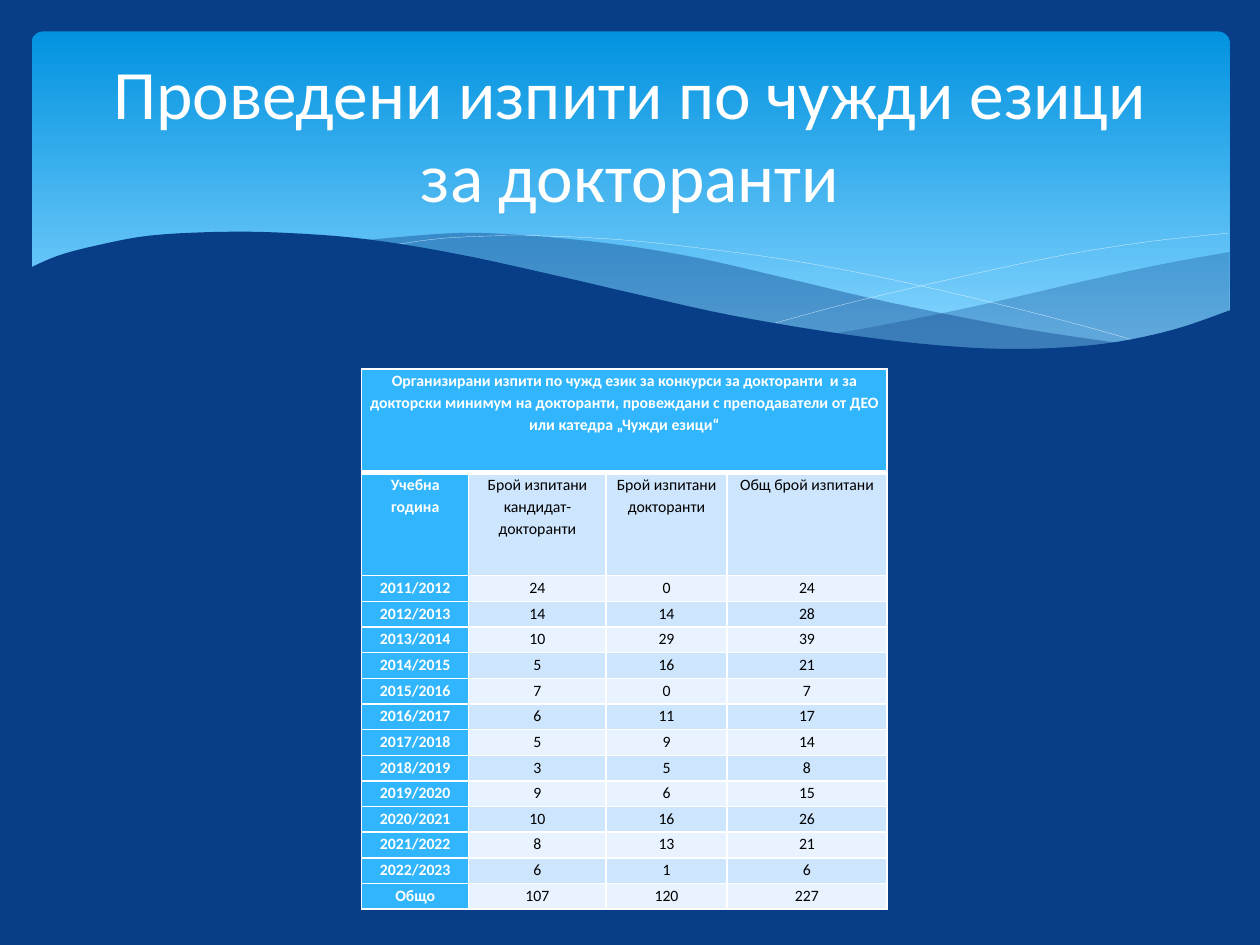
from lxml.etree import SubElement
from pptx import Presentation
from pptx.dml.color import RGBColor
from pptx.enum.shapes import MSO_SHAPE
from pptx.enum.text import MSO_ANCHOR, MSO_AUTO_SIZE, PP_ALIGN
from pptx.oxml import parse_xml
from pptx.oxml.ns import nsdecls, qn
from pptx.util import Inches, Pt

FONT = "Calibri"
COLORS = {
    "navy": "073E87", "sky_top": "0293E0", "sky_bottom": "83D3FE",
    "head": "31B6FD", "band_dark": "CEE5FE", "band_light": "E8F3FF",
    "white": "FFFFFF", "black": "000000",
}
TITLE = "Проведени изпити по чужди езици за докторанти"
CAPTION = ("Организирани изпити по чужд език за конкурси за докторанти  и за "
           "докторски минимум на докторанти, провеждани с преподаватели от ДЕО "
           "или катедра „Чужди езици“")
HEADINGS = ("Учебна година", "Брой изпитани кандидат-докторанти",
            "Брой изпитани докторанти", "Общ брой изпитани")
EXAMS = [(24, 0, 24), (14, 14, 28), (10, 29, 39), (5, 16, 21), (7, 0, 7),
         (6, 11, 17), (5, 9, 14), (3, 5, 8), (9, 6, 15), (10, 16, 26),
         (8, 13, 21), (6, 1, 6)]
FIRST_YEAR = 2011
TOTALS = ("Общо", 107, 120, 227)

# Knots of the curves, in inches
RIGHT_WAVE_TOP = [(9.76, 2), (9.21, 2.1), (8.61, 2.23), (7.79, 2.42),
                  (7.06, 2.57), (6.61, 2.65)]
RIGHT_WAVE_BOTTOM = [(6.61, 2.65), (7.05, 2.71), (7.57, 2.76), (8.14, 2.78),
                     (8.72, 2.74), (9.21, 2.65), (9.76, 2.47)]
MIDDLE_WAVE_TOP = [(8.93, 2.73), (8.07, 2.6), (7.06, 2.4), (6.29, 2.22),
                   (5.55, 2.05), (4.89, 1.94), (4.2, 1.87), (3.61, 1.85),
                   (2.86, 1.91)]
MIDDLE_WAVE_BOTTOM = [(2.86, 1.91), (3.62, 2.03), (4.49, 2.22), (5.3, 2.4),
                      (6.01, 2.55), (6.8, 2.68), (7.48, 2.76), (8.18, 2.78),
                      (8.93, 2.73)]
FALLING_LINE = [(3.09, 1.95), (3.53, 1.89), (4.16, 1.87), (4.89, 1.9),
                (5.56, 1.97), (6.36, 2.08), (7.27, 2.26), (8.31, 2.51),
                (9.07, 2.72)]
RISING_LINE = [(6.13, 2.57), (6.72, 2.41), (7.48, 2.23), (8.36, 2.04),
               (9.1, 1.92), (9.75, 1.85)]
FRONT_WAVE = [(9.77, 2.46), (9.3, 2.62), (8.75, 2.73), (8.09, 2.77),
              (7.44, 2.74), (6.68, 2.65), (5.79, 2.5), (5.03, 2.33),
              (4.47, 2.2), (3.65, 2.02), (2.92, 1.9), (2.3, 1.85),
              (1.77, 1.84), (1.19, 1.87), (0.76, 1.95), (0.46, 2.03),
              (0.23, 2.13)]


def rgb(name):
    return RGBColor.from_string(COLORS[name])


def smooth(knots, steps=5):
    """Catmull-Rom curve through the knots, as a list of points."""
    ends = [knots[0], *knots, knots[-1]]
    points = [knots[0]]
    for a, b, c, d in zip(ends, ends[1:], ends[2:], ends[3:]):
        for i in range(1, steps + 1):
            t = i / steps
            points.append(tuple(
                (2 * q + (r - p) * t + (2 * p - 5 * q + 4 * r - u) * t ** 2
                 + (3 * q - p - 3 * r + u) * t ** 3) / 2
                for p, q, r, u in zip(a, b, c, d)))
    return points


def add_outline(s, points, close):
    """Freeform through points in inches; its own units are whole EMU."""
    start, *rest = [(Inches(x), Inches(y)) for x, y in points]
    builder = s.shapes.build_freeform(*start, scale=1.0)
    builder.add_line_segments(rest, close=close)
    sp = builder.convert_to_shape()
    sp.shadow.inherit = False
    return sp


def add_wave(s, points, opacity=100):
    sp = add_outline(s, points, True)
    sp.line.fill.background()
    sp.fill.solid()
    sp.fill.fore_color.rgb = rgb("navy")
    if opacity < 100:
        color = sp.fill._xPr.find(qn("a:solidFill"))[0]
        SubElement(color, qn("a:alpha")).set("val", str(opacity * 1000))


def add_hairline(s, knots):
    sp = add_outline(s, smooth(knots), False)
    sp.fill.background()
    sp.line.color.rgb = rgb("white")
    sp.line.width = Pt(0.1)


def add_sky(s):
    sp = s.shapes.add_shape(MSO_SHAPE.ROUNDED_RECTANGLE, Inches(0.25),
                            Inches(0.25), Inches(9.51), Inches(2.7))
    sp.adjustments[0] = 0.034
    sp.shadow.inherit = False
    sp.line.fill.background()
    sp.fill.gradient()
    sp.fill.gradient_angle = 270
    stops = ((0, "sky_top"), (0.9, "sky_bottom"))
    for stop, (position, color) in zip(sp.fill.gradient_stops, stops):
        stop.position = position
        stop.color.rgb = rgb(color)


def add_run(p, text, size, color, bold=False):
    r = p.add_run()
    r.text = text
    r.font.name = FONT
    r.font.size = Pt(size)
    r.font.bold = bold
    r.font.color.rgb = rgb(color)


def set_borders(cell, **widths):
    """White borders; widths in points by side (L, R, T, B), otherwise 1."""
    tc_pr = cell._tc.get_or_add_tcPr()
    for i, side in enumerate("LRTB"):
        width = Pt(widths.get(side, 1))
        tc_pr.insert(i, parse_xml(
            f'<a:ln{side} {nsdecls("a")} w="{width}"><a:solidFill>'
            f'<a:srgbClr val="{COLORS["white"]}"/></a:solidFill></a:ln{side}>'))


def fill_cell(cell, text, fill, is_head):
    cell.margin_left = cell.margin_right = Inches(0.06)
    cell.margin_top = cell.margin_bottom = 0
    cell.fill.solid()
    cell.fill.fore_color.rgb = rgb(fill)
    p = cell.text_frame.paragraphs[0]
    p.alignment = PP_ALIGN.CENTER
    p.line_spacing = 1.15
    if text:
        add_run(p, text, 9, "white" if is_head else "black", is_head)


def add_exam_table(s):
    years = [(f"{y}/{y + 1}", *counts)
             for y, counts in enumerate(EXAMS, FIRST_YEAR)]
    rows = [(CAPTION, "", "", ""), HEADINGS, *years, TOTALS]
    widths = (0.85, 1.09, 0.96, 1.27)
    height, tall = 4.29, 0.82
    low = (height - 2 * tall) / (len(rows) - 2)
    table = s.shapes.add_table(len(rows), len(widths), Inches(2.87), Inches(2.93),
                               Inches(sum(widths)), Inches(height)).table
    for column, width in zip(table.columns, widths):
        column.width = Inches(width)
    for i, values in enumerate(rows):
        table.rows[i].height = Inches(tall if i < 2 else low)
        band = "band_dark" if i % 2 else "band_light"
        for j, value in enumerate(values):
            is_head = i == 0 or j == 0
            cell = table.cell(i, j)
            fill_cell(cell, str(value), "head" if is_head else band, is_head)
            set_borders(cell, T=3 if i == 1 else 1, B=3 if i == 0 else 1)
    table.cell(0, 0).merge(table.cell(0, len(widths) - 1))


def set_title(s):
    title = s.shapes.title
    title.left, title.top = Inches(0.5), Inches(0.37)
    title.width, title.height = Inches(9), Inches(1.37)
    tf = title.text_frame
    tf.word_wrap = True
    tf.auto_size = MSO_AUTO_SIZE.NONE
    tf.vertical_anchor = MSO_ANCHOR.MIDDLE
    p = tf.paragraphs[0]
    p.alignment = PP_ALIGN.CENTER
    add_run(p, TITLE, 39.6, "white")
    s.shapes._spTree.append(title._element)  # bring to front


def main():
    prs = Presentation()
    prs.slide_width, prs.slide_height = Inches(10), Inches(7.5)
    s = prs.slides.add_slide(prs.slide_layouts[5])
    s.background.fill.solid()
    s.background.fill.fore_color.rgb = rgb("navy")
    add_sky(s)
    add_wave(s, smooth(RIGHT_WAVE_TOP) + smooth(RIGHT_WAVE_BOTTOM), 29)
    add_wave(s, smooth(MIDDLE_WAVE_TOP) + smooth(MIDDLE_WAVE_BOTTOM), 40)
    add_hairline(s, FALLING_LINE)
    add_hairline(s, RISING_LINE)
    add_wave(s, smooth(FRONT_WAVE) + [(0.23, 3.29), (9.77, 3.29)])
    add_exam_table(s)
    set_title(s)
    prs.save("out.pptx")


if __name__ == "__main__":
    main()
